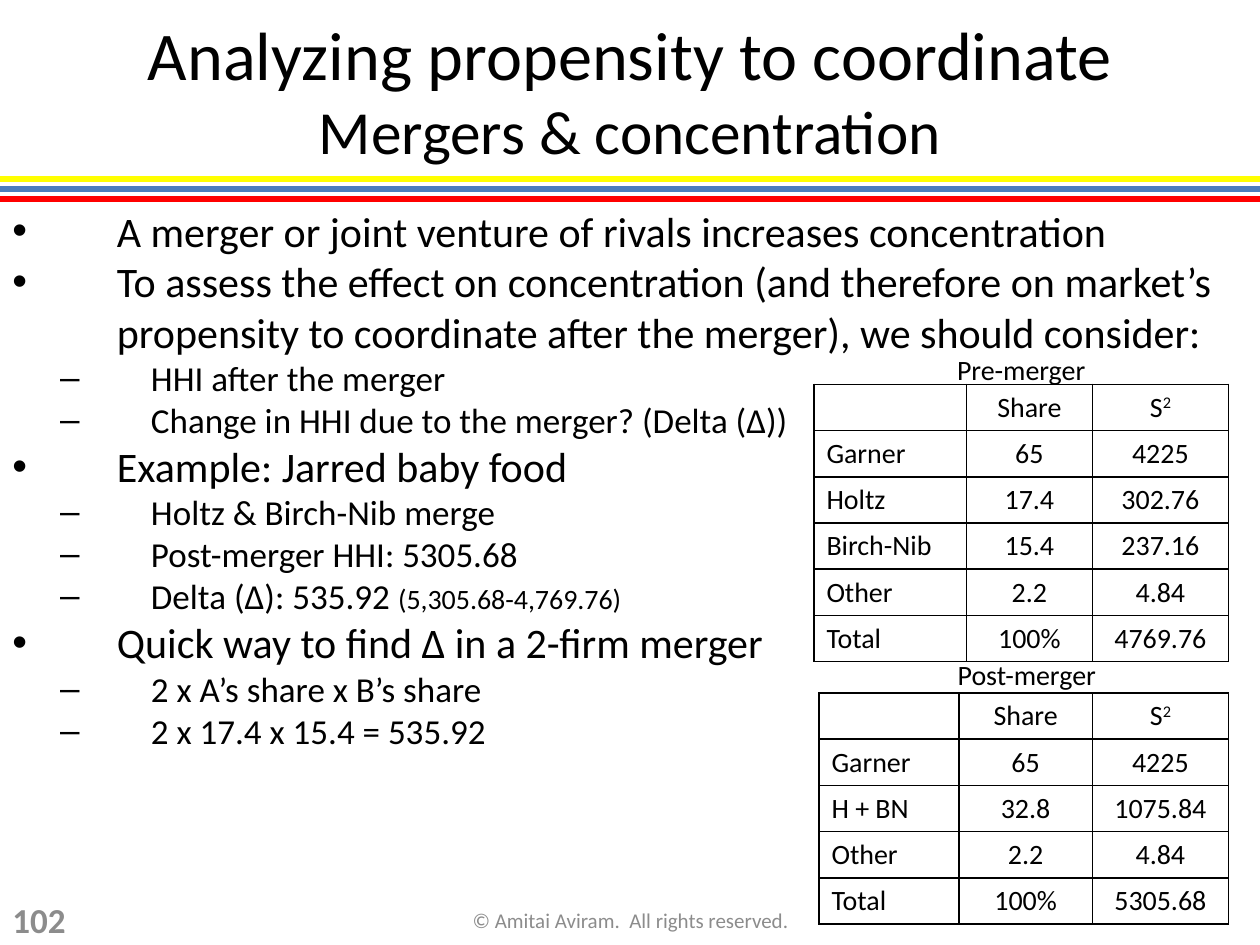
from lxml import etree
from pptx import Presentation
from pptx import util as u
from pptx.dml import color
from pptx.enum import shapes, text
from pptx.oxml import ns

Inches = u.Inches
COLORS = {"black": "000000", "grey": "8C8C8C", "yellow": "FFFF00", "blue": "4B7EBC", "red": "FF0000"}
ALIGN = text.PP_ALIGN
MIDDLE = text.MSO_ANCHOR.MIDDLE


def write(paragraph, words, size=16, ink="black", bold=False, align=ALIGN.LEFT, raised=False):
    paragraph.alignment = align
    run = paragraph.add_run()
    run.text = words
    run.font.name = "Calibri"
    run.font.size = u.Pt(size)
    run.font.bold = bold
    run.font.color.rgb = color.RGBColor.from_string(COLORS[ink])
    if raised:
        run.font._element.set("baseline", "30000")


def add_box(left, top, width, height, anchor=text.MSO_ANCHOR.TOP):
    frame = slide.shapes.add_textbox(Inches(left), Inches(top), Inches(width), Inches(height)).text_frame
    frame.word_wrap = True
    frame.vertical_anchor = anchor
    return frame


deck = Presentation()
deck.slide_width, deck.slide_height = Inches(10), Inches(7.5)
slide = deck.slides.add_slide(deck.slide_layouts[5])

for y, ink in [(1.5, "blue"), (1.58, "red"), (1.42, "yellow")]:
    stripe = slide.shapes.add_connector(shapes.MSO_CONNECTOR.STRAIGHT, 0, Inches(y), Inches(10), Inches(y))
    stripe.line.color.rgb = color.RGBColor.from_string(COLORS[ink])
    stripe.line.width = u.Pt(3)
    etree.SubElement(stripe._element.spPr, ns.qn("a:effectLst"))

title = slide.shapes.title
title.left, title.top, title.width, title.height = 0, 0, Inches(10), Inches(1.42)
title.text_frame.auto_size = text.MSO_AUTO_SIZE.NONE
title.text_frame.vertical_anchor = MIDDLE
heading = title.text_frame.paragraphs[0]
write(heading, "Analyzing propensity to coordinate", size=39, align=ALIGN.CENTER)
heading.add_line_break()
write(heading, "Mergers & concentration", size=35, align=ALIGN.CENTER)

LEVELS = [
    {"size": 24, "bullet": "•", "indent": 0.83, "hang": 0.83},
    {"size": 20, "bullet": "–", "indent": 1.1, "hang": 0.72},
]
points = [
    (0, "A merger or joint venture of rivals increases concentration"),
    (0, "To assess the effect on concentration (and therefore on market’s "
        "propensity to coordinate after the merger), we should consider:"),
    (1, "HHI after the merger"),
    (1, "Change in HHI due to the merger? (Delta (∆))"),
    (0, "Example: Jarred baby food"),
    (1, "Holtz & Birch-Nib merge"),
    (1, "Post-merger HHI: 5305.68"),
    (1, "Delta (∆): 535.92 "),
    (0, "Quick way to find ∆ in a 2-firm merger"),
    (1, "2 x A’s share x B’s share"),
    (1, "2 x 17.4 x 15.4 = 535.92"),
]
body = add_box(0, 1.58, 10, 5.67)
for index, (level, words) in enumerate(points):
    point = body.add_paragraph() if index else body.paragraphs[0]
    look = LEVELS[level]
    point.level = level
    write(point, words, size=look["size"])
    if words.startswith("Delta"):
        write(point, "(5,305.68-4,769.76)", size=16)
    props = point._p.get_or_add_pPr()
    props.set("marL", str(Inches(look["indent"])))
    props.set("indent", str(-Inches(look["hang"])))
    etree.SubElement(props, ns.qn("a:buFont"), typeface="Arial")
    etree.SubElement(props, ns.qn("a:buChar"), char=look["bullet"])

footer = add_box(3.42, 7.1, 3.17, 0.4, MIDDLE)
write(footer.paragraphs[0], "© Amitai Aviram.  All rights reserved.", size=12, ink="grey", align=ALIGN.CENTER)
page = add_box(0, 7.1, 0.67, 0.4, MIDDLE)
write(page.paragraphs[0], "102", size=20, ink="grey", bold=True, align=ALIGN.JUSTIFY)

HEADER = ("", "Share", "S²")
markets = [
    {"caption": "Pre-merger", "caption_at": (6.46, 2.75, 3.29, 0.37), "at": (6.46, 3.05), "height": 2.2,
     "columns": (1.21, 1, 1.08),
     "rows": [HEADER, ("Garner", "65", "4225"), ("Holtz", "17.4", "302.76"),
              ("Birch-Nib", "15.4", "237.16"), ("Other", "2.2", "4.84"), ("Total", "100%", "4769.76")]},
    {"caption": "Post-merger", "caption_at": (6.58, 5.17, 3.14, 0.37), "at": (6.5, 5.5), "height": 1.83,
     "columns": (1.11, 1.06, 1.08),
     "rows": [HEADER, ("Garner", "65", "4225"), ("H + BN", "32.8", "1075.84"),
              ("Other", "2.2", "4.84"), ("Total", "100%", "5305.68")]},
]
for market in markets:
    rows, columns = market["rows"], market["columns"]
    left, top = market["at"]
    grid = slide.shapes.add_table(len(rows), len(columns), Inches(left), Inches(top),
                                  Inches(sum(columns)), Inches(market["height"])).table
    grid.first_row = grid.horz_banding = False
    for column, width in zip(grid.columns, columns):
        column.width = Inches(width)
    for r, row in enumerate(rows):
        for c, value in enumerate(row):
            cell = grid.cell(r, c)
            entry = cell.text_frame.paragraphs[0]
            align = ALIGN.CENTER if c else ALIGN.LEFT
            if value:
                write(entry, value.rstrip("²"), align=align)
                if value.endswith("²"):
                    write(entry, "2", align=align, raised=True)
            else:
                etree.SubElement(entry._p, ns.qn("a:endParaRPr"), sz="1600")
            edges = cell._tc.get_or_add_tcPr()
            for side in ("lnL", "lnR", "lnT", "lnB"):
                edge = etree.SubElement(edges, ns.qn("a:" + side), w=str(u.Pt(1)))
                paint = etree.SubElement(edge, ns.qn("a:solidFill"))
                etree.SubElement(paint, ns.qn("a:srgbClr"), val=COLORS["black"])
            cell.fill.background()
    caption = add_box(*market["caption_at"])
    write(caption.paragraphs[0], market["caption"], align=ALIGN.CENTER)

deck.save("out.pptx")
